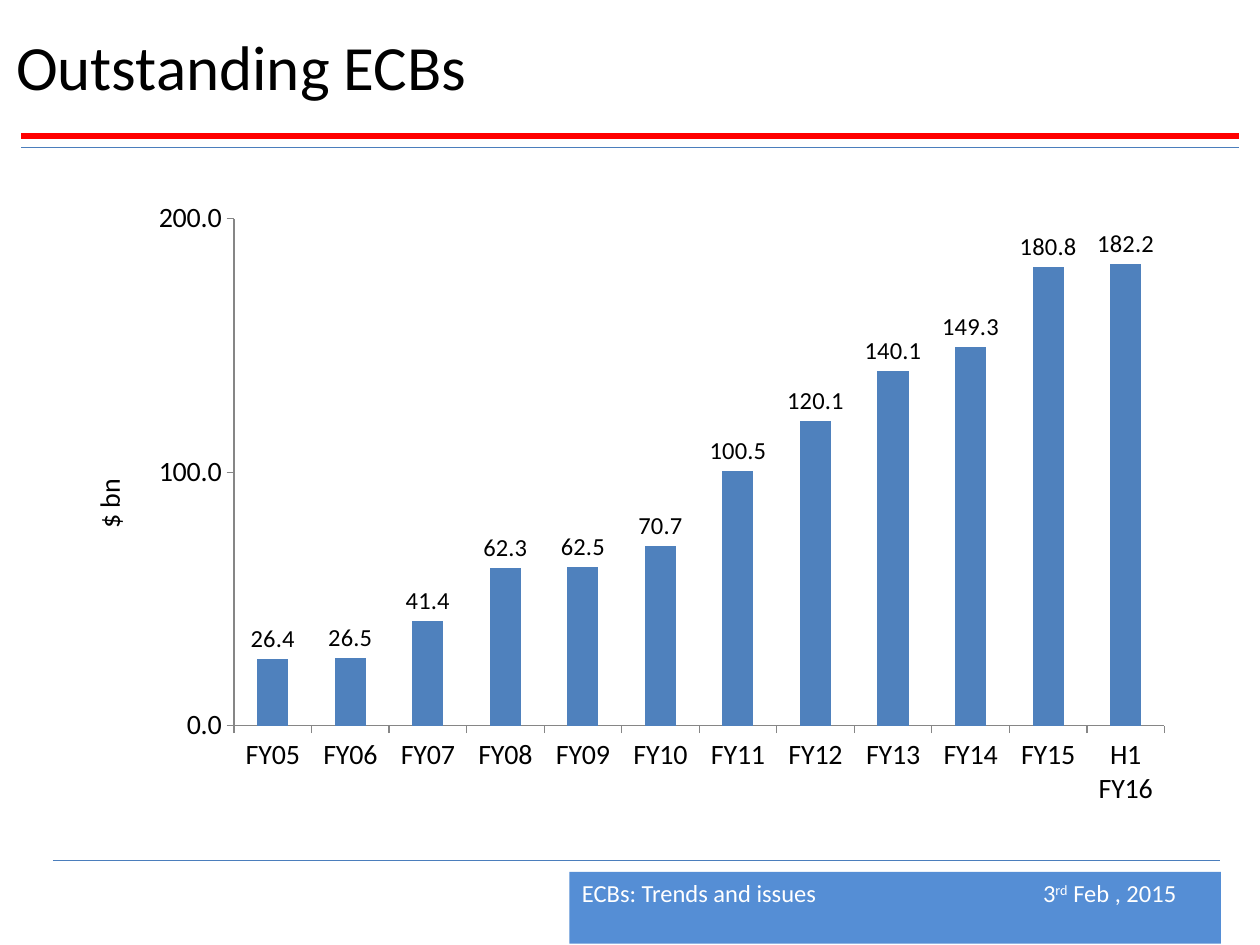
"""Build the Outstanding ECBs column chart slide."""
import pptx
import pptx.chart.data
import pptx.dml.color
import pptx.enum.chart
import pptx.enum.shapes
import pptx.enum.text
import pptx.oxml.ns
import pptx.util
from lxml import etree

Inches, Pt = pptx.util.Inches, pptx.util.Pt

THEME = {
    "font": "Calibri",
    "text": "000000", "inverse": "FFFFFF", "bar": "4F81BD", "axis": "868686",
    "accent": "FF0000", "rule": "4B7EBC", "footer": "558ED5",
    "title_size": 36, "axis_size": 16, "label_size": 14, "footer_size": 14,
}
WIDTH, HEIGHT = 10, 7.5

TITLE = "Outstanding ECBs"
FOOTER = [("ECBs: Trends and issues\t3", False), ("rd", True), (" Feb , 2015", False)]
AXIS_TITLE = "$ bn"
OUTSTANDING = {
    "FY05": 26.4, "FY06": 26.5, "FY07": 41.4, "FY08": 62.3,
    "FY09": 62.5, "FY10": 70.7, "FY11": 100.5, "FY12": 120.1,
    "FY13": 140.1, "FY14": 149.3, "FY15": 180.8, "H1 FY16": 182.2,
}
RULES = [
    (0.17, 9.83, 1.08, "accent", 3),
    (0.17, 9.83, 1.17, "rule", 0.75),
    (0.42, 9.68, 6.83, "rule", 0.75),
]
TITLE_BOX = (0.03, 0.03, 9.97, 0.97)
CHART_BOX = (0.5, 1.5, 8.92, 5)
FOOTER_BOX = (4.52, 6.92, 5.17, 0.57)
DATE_TAB = 3.66


def color(name):
    return pptx.dml.color.RGBColor.from_string(THEME[name])


def set_font(font, size, color_name="text"):
    font.name = THEME["font"]
    font.size = Pt(THEME[size])
    font.bold = False
    font.color.rgb = color(color_name)


def add_rule(slide, left, right, top, color_name, weight):
    rule = slide.shapes.add_connector(
        pptx.enum.shapes.MSO_CONNECTOR.STRAIGHT,
        Inches(left), Inches(top), Inches(right), Inches(top))
    rule.line.color.rgb = color(color_name)
    rule.line.width = Pt(weight)
    etree.SubElement(rule._element.spPr, pptx.oxml.ns.qn("a:effectLst"))


def add_title(slide):
    box = slide.shapes.add_textbox(*map(Inches, TITLE_BOX))
    box.line.color.rgb = color("inverse")
    box.line.width = Pt(0.75)
    frame = box.text_frame
    frame.word_wrap = True
    frame.vertical_anchor = pptx.enum.text.MSO_ANCHOR.MIDDLE
    paragraph = frame.paragraphs[0]
    paragraph.text = TITLE
    set_font(paragraph.font, "title_size")


def add_footer(slide):
    shape = slide.shapes.add_shape(
        pptx.enum.shapes.MSO_SHAPE.RECTANGLE, *map(Inches, FOOTER_BOX))
    shape.shadow.inherit = False
    shape.fill.solid()
    shape.fill.fore_color.rgb = color("footer")
    shape.line.fill.background()
    frame = shape.text_frame
    frame.word_wrap = True
    frame.vertical_anchor = pptx.enum.text.MSO_ANCHOR.TOP
    paragraph = frame.paragraphs[0]
    paragraph.alignment = pptx.enum.text.PP_ALIGN.LEFT
    tabs = etree.SubElement(paragraph._p.get_or_add_pPr(), pptx.oxml.ns.qn("a:tabLst"))
    etree.SubElement(tabs, pptx.oxml.ns.qn("a:tab"), pos=str(Inches(DATE_TAB)), algn="l")
    set_font(paragraph.font, "footer_size", "inverse")
    for text, raised in FOOTER:
        run = paragraph.add_run()
        run.text = text
        if raised:
            run._r.get_or_add_rPr().set("baseline", "30000")


def add_chart(slide):
    data = pptx.chart.data.CategoryChartData(number_format="0.0")
    data.categories = list(OUTSTANDING)
    data.add_series("Series 1", list(OUTSTANDING.values()))
    chart = slide.shapes.add_chart(
        pptx.enum.chart.XL_CHART_TYPE.COLUMN_CLUSTERED,
        *map(Inches, CHART_BOX), data).chart
    chart.has_legend = False
    chart.has_title = False
    set_font(chart.font, "axis_size")

    plot = chart.plots[0]
    plot.gap_width = 150
    plot.vary_by_categories = False
    fill = plot.series[0].format.fill
    fill.solid()
    fill.fore_color.rgb = color("bar")
    plot.has_data_labels = True
    labels = plot.data_labels
    labels.show_value = True
    labels.number_format = "0.0"
    labels.number_format_is_linked = False
    labels.position = pptx.enum.chart.XL_LABEL_POSITION.OUTSIDE_END
    set_font(labels.font, "label_size")

    for axis in (chart.category_axis, chart.value_axis):
        axis.has_major_gridlines = False
        axis.major_tick_mark = pptx.enum.chart.XL_TICK_MARK.OUTSIDE
        axis.minor_tick_mark = pptx.enum.chart.XL_TICK_MARK.NONE
        axis.format.line.color.rgb = color("axis")
        axis.format.line.width = Pt(0.75)
        set_font(axis.tick_labels.font, "axis_size")
    value_axis = chart.value_axis
    value_axis.minimum_scale, value_axis.maximum_scale = 0, 200
    value_axis.major_unit = 100
    value_axis.tick_labels.number_format = "0.0"
    value_axis.tick_labels.number_format_is_linked = False
    paragraph = value_axis.axis_title.text_frame.paragraphs[0]
    paragraph.text = AXIS_TITLE
    set_font(paragraph.font, "axis_size")


def main():
    presentation = pptx.Presentation()
    presentation.slide_width = Inches(WIDTH)
    presentation.slide_height = Inches(HEIGHT)
    slide = presentation.slides.add_slide(presentation.slide_layouts[6])
    add_title(slide)
    for rule in RULES:
        add_rule(slide, *rule)
    add_footer(slide)
    add_chart(slide)
    presentation.save("out.pptx")


if __name__ == "__main__":
    main()
